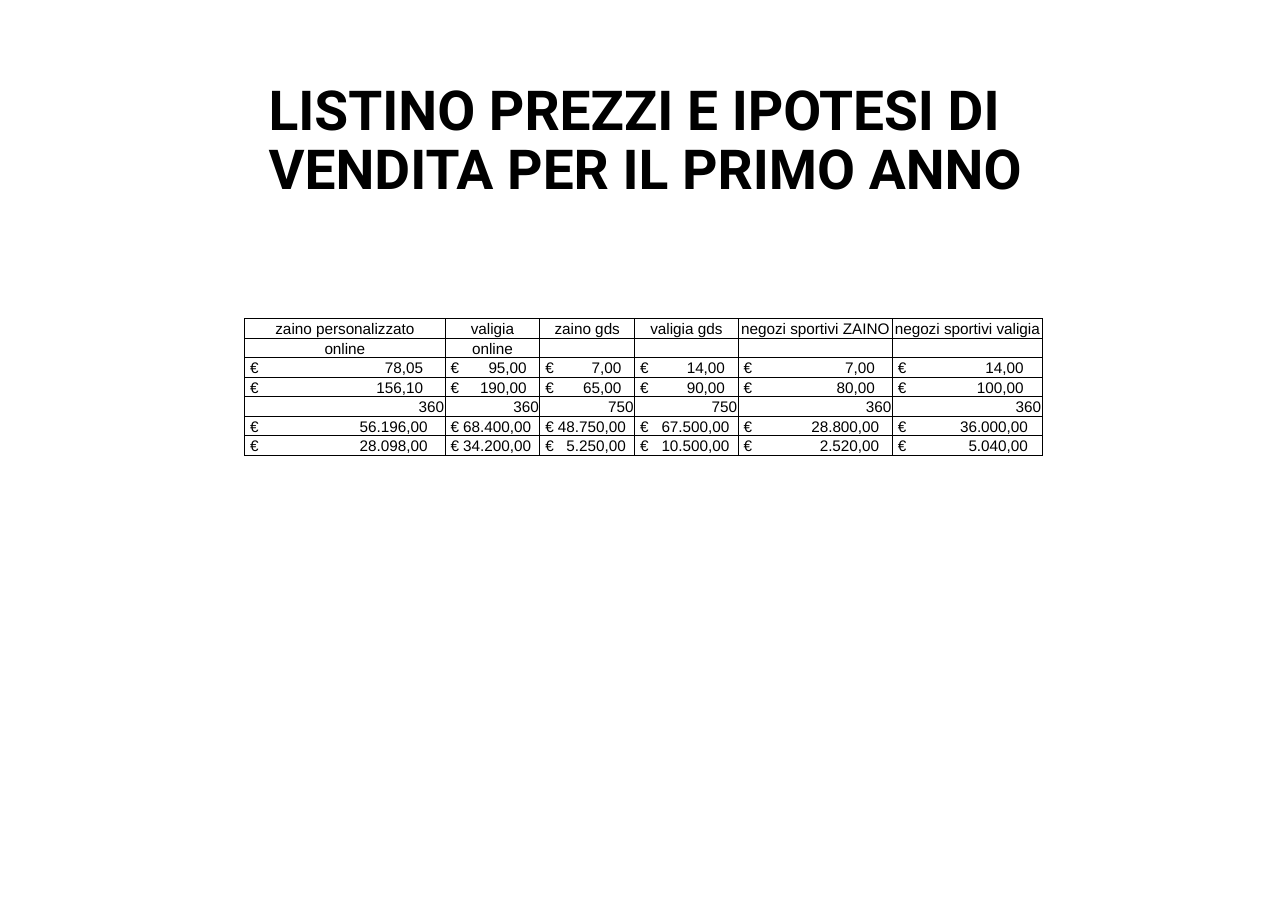
"""Build the price list slide with first-year sales assumptions."""
from lxml.etree import SubElement
from pptx import Presentation
from pptx.dml.color import RGBColor
from pptx.enum.text import MSO_ANCHOR, PP_ALIGN
from pptx.oxml.ns import qn
from pptx.util import Inches, Pt

COLOURS = {"ink": "000000", "paper": "FFFFFF"}
WIDTHS = [1.82, 0.86, 0.86, 0.94, 1.4, 1.36]
AMOUNT_GAPS = [0.16, 0.08, 0.08, 0.08, 0.12, 0.13]
PRICE_SHIFT = 0.04
EURO_INSET = 0.05
TABLE_HEIGHT = 1.24
ROWS = [
    ("label", ["zaino personalizzato", "valigia", "zaino gds", "valigia gds",
               "negozi sportivi ZAINO", "negozi sportivi valigia"]),
    ("label", ["online", "online", "", "", "", ""]),
    ("price", ["78,05", "95,00", "7,00", "14,00", "7,00", "14,00"]),
    ("price", ["156,10", "190,00", "65,00", "90,00", "80,00", "100,00"]),
    ("count", ["360", "360", "750", "750", "360", "360"]),
    ("total", ["56.196,00", "68.400,00", "48.750,00", "67.500,00", "28.800,00", "36.000,00"]),
    ("total", ["28.098,00", "34.200,00", "5.250,00", "10.500,00", "2.520,00", "5.040,00"]),
]
ALIGNMENTS = {"label": PP_ALIGN.CENTER, "count": PP_ALIGN.RIGHT}


def write_text(para, text, size=10, font="Arial", bold=False, align=PP_ALIGN.LEFT, spacing=None):
    """Write one formatted span, or only the text size when the text is empty."""
    para.alignment = align
    if spacing:
        para.line_spacing = spacing
    if not text:
        SubElement(para._p, qn("a:endParaRPr"), sz=str(size * 100))
        return
    span = para.add_run()
    span.text = text
    span.font.size = Pt(size)
    span.font.name = font
    span.font.bold = bold
    span.font.color.rgb = RGBColor.from_string(COLOURS["ink"])


def add_right_tab(para, position):
    """Add a right-aligned tab stop to a paragraph."""
    tabs = SubElement(para._p.get_or_add_pPr(), qn("a:tabLst"))
    SubElement(tabs, qn("a:tab"), pos=str(Inches(position)), algn="r")


def add_borders(cell):
    """Draw a thin line on all four sides of a cell."""
    properties = cell._tc.get_or_add_tcPr()
    for side in ("lnL", "lnR", "lnT", "lnB"):
        line = SubElement(properties, qn(f"a:{side}"), w=str(Pt(0.5)))
        fill = SubElement(line, qn("a:solidFill"))
        SubElement(fill, qn("a:srgbClr"), val=COLOURS["ink"])


def fill_cell(cell, kind, text, column):
    """Format one cell and write its label, count or euro amount."""
    is_euro = kind in ("price", "total")
    cell.vertical_anchor = MSO_ANCHOR.BOTTOM
    cell.margin_left = Inches(EURO_INSET if is_euro else 0.01)
    cell.margin_right = cell.margin_top = Inches(0.01)
    cell.margin_bottom = 0
    add_borders(cell)
    cell.fill.background()
    para = cell.text_frame.paragraphs[0]
    if is_euro:
        gap = AMOUNT_GAPS[column] + (PRICE_SHIFT if kind == "price" else 0)
        add_right_tab(para, WIDTHS[column] - EURO_INSET - gap)
        text = f"€\t{text}"
    write_text(para, text, align=ALIGNMENTS.get(kind, PP_ALIGN.LEFT))


def add_title(page, text):
    """Add the slide title."""
    box = page.shapes.add_textbox(Inches(2.34), Inches(0.49), Inches(8.5), Inches(1.6))
    frame = box.text_frame
    frame.word_wrap = True
    frame.vertical_anchor = MSO_ANCHOR.MIDDLE
    write_text(frame.paragraphs[0], text, size=36, font="Roboto", bold=True, spacing=0.9)


def add_price_table(page):
    """Add the table of prices, quantities and totals."""
    shape = page.shapes.add_table(len(ROWS), len(WIDTHS), Inches(2.22), Inches(2.89),
                                  Inches(sum(WIDTHS)), Inches(TABLE_HEIGHT))
    table = shape.table
    table.first_row = table.horz_banding = False
    for column, width in zip(table.columns, WIDTHS):
        column.width = Inches(width)
    for row, (kind, texts) in enumerate(ROWS):
        for column, text in enumerate(texts):
            fill_cell(table.cell(row, column), kind, text, column)


def main():
    """Build and save the deck."""
    deck = Presentation()
    deck.slide_width, deck.slide_height = Inches(11.69), Inches(8.27)
    page = deck.slides.add_slide(deck.slide_layouts[6])
    page.background.fill.solid()
    page.background.fill.fore_color.rgb = RGBColor.from_string(COLOURS["paper"])
    add_title(page, "LISTINO PREZZI E IPOTESI DI VENDITA PER IL PRIMO ANNO")
    add_price_table(page)
    deck.save("out.pptx")


if __name__ == "__main__":
    main()
